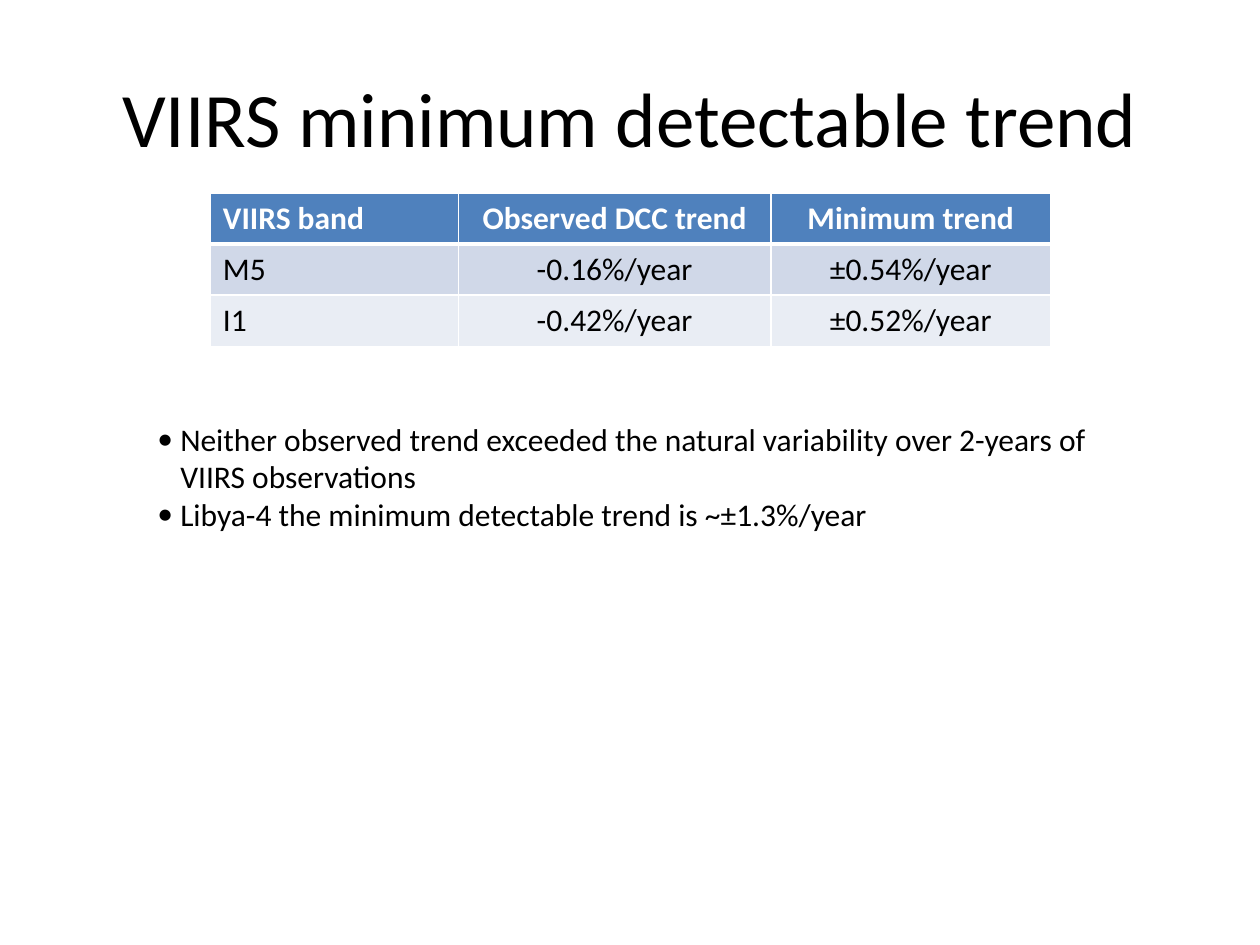
from lxml.etree import SubElement
from pptx import Presentation
from pptx.dml.color import RGBColor
from pptx.enum.text import MSO_ANCHOR, MSO_AUTO_SIZE, PP_ALIGN
from pptx.oxml.ns import qn
from pptx.util import Cm, Pt

TITLE = "VIIRS minimum detectable trend"
TREND_ROWS = [
    ("VIIRS band", "Observed DCC trend", "Minimum trend"),
    ("M5", "-0.16%/year", "±0.54%/year"),
    ("I1", "-0.42%/year", "±0.52%/year"),
]
FINDINGS = [
    "Neither observed trend exceeded the natural variability over 2-years of VIIRS observations",
    "Libya-4 the minimum detectable trend is ~±1.3%/year",
]

FONT = "Calibri"
BLACK = RGBColor(0x00, 0x00, 0x00)
WHITE = RGBColor(0xFF, 0xFF, 0xFF)
ROW_FILLS = [
    RGBColor(0x4F, 0x81, 0xBD),
    RGBColor(0xD0, 0xD8, 0xE8),
    RGBColor(0xE9, 0xED, 0xF4),
]
COLUMN_WIDTHS = [Cm(5), Cm(6.3), Cm(5.64)]
ROW_HEIGHT = Cm(1.03)
BULLET_INDENT = Cm(0.46)


def add_run(paragraph, text, size, color=BLACK, bold=False):
    run = paragraph.add_run()
    run.text = text
    run.font.name = FONT
    run.font.size = Pt(size)
    run.font.bold = bold
    run.font.color.rgb = color


def place(shape, left, top, width, height):
    shape.left, shape.top = Cm(left), Cm(top)
    shape.width, shape.height = Cm(width), Cm(height)


def set_borders(cell, widths):
    properties = cell._tc.get_or_add_tcPr()
    for side, width in widths.items():
        line = SubElement(properties, qn(f"a:ln{side}"), w=str(Pt(width)))
        fill = SubElement(line, qn("a:solidFill"))
        SubElement(fill, qn("a:srgbClr"), val=str(WHITE))


def add_title(slide):
    title = slide.shapes.title
    place(title, 1.27, 0.76, 22.86, 3.18)
    title.text_frame.vertical_anchor = MSO_ANCHOR.MIDDLE
    paragraph = title.text_frame.paragraphs[0]
    paragraph.alignment = PP_ALIGN.CENTER
    add_run(paragraph, TITLE, 44)


def add_trend_table(slide):
    table = slide.shapes.add_table(
        len(TREND_ROWS), len(COLUMN_WIDTHS), Cm(4.24), Cm(3.89),
        sum(COLUMN_WIDTHS), ROW_HEIGHT * len(TREND_ROWS)).table
    for column, width in zip(table.columns, COLUMN_WIDTHS):
        column.width = width
    for row_index, values in enumerate(TREND_ROWS):
        header = row_index == 0
        table.rows[row_index].height = ROW_HEIGHT
        for column_index, value in enumerate(values):
            cell = table.cell(row_index, column_index)
            set_borders(cell, {"L": 1, "R": 1, "T": 3 if row_index == 1 else 1,
                               "B": 3 if header else 1})
            cell.fill.solid()
            cell.fill.fore_color.rgb = ROW_FILLS[row_index]
            paragraph = cell.text_frame.paragraphs[0]
            paragraph.alignment = PP_ALIGN.CENTER if column_index else PP_ALIGN.LEFT
            add_run(paragraph, value, 18, WHITE if header else BLACK, header)


def add_findings(slide):
    body = slide.placeholders[1]
    place(body, 2.92, 8.33, 19.99, 2.57)
    frame = body.text_frame
    frame.word_wrap = True
    frame.auto_size = MSO_AUTO_SIZE.NONE
    for index, finding in enumerate(FINDINGS):
        paragraph = frame.add_paragraph() if index else frame.paragraphs[0]
        properties = paragraph._p.get_or_add_pPr()
        properties.set("marL", str(BULLET_INDENT))
        properties.set("indent", str(-BULLET_INDENT))
        SubElement(properties, qn("a:buFont"), typeface=FONT)
        SubElement(properties, qn("a:buChar"), char="•")
        paragraph.space_before = Pt(0)
        add_run(paragraph, finding, 18)


def main():
    """Build the slide on the minimum detectable trend of the VIIRS bands."""
    presentation = Presentation()
    presentation.slide_width, presentation.slide_height = Cm(25.4), Cm(19.05)
    slide = presentation.slides.add_slide(presentation.slide_layouts[1])
    add_title(slide)
    add_trend_table(slide)
    add_findings(slide)
    presentation.save("out.pptx")


if __name__ == "__main__":
    main()
